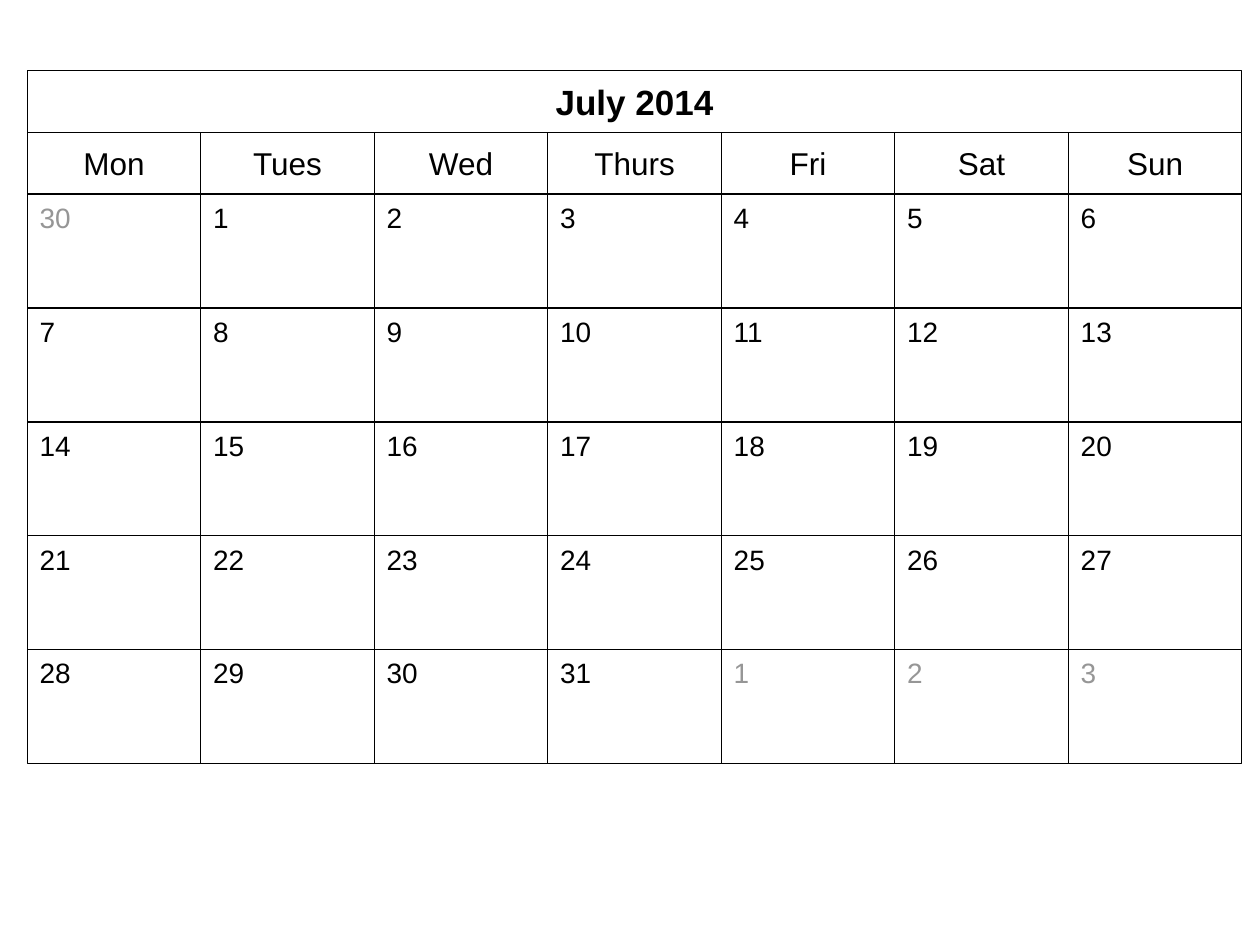
from pptx import Presentation
from pptx.dml.color import RGBColor
from pptx.enum.shapes import MSO_SHAPE as Shape
from pptx.enum.text import MSO_ANCHOR as Anchor, MSO_AUTO_SIZE as AutoSize, PP_ALIGN as Align
from pptx.util import Pt

BLACK = RGBColor(0x00, 0x00, 0x00)
WHITE = RGBColor(0xFF, 0xFF, 0xFF)
GRAY = RGBColor(0x96, 0x96, 0x96)

LEFT, TOP = 15.6, 40.3
DAY_WIDTH, DAY_HEIGHT = 99.15, 65.1
HEADER_HEIGHT = 35.3
WEEKDAYS = ["Mon", "Tues", "Wed", "Thurs", "Fri", "Sat", "Sun"]
DAYS = (
    [(30, GRAY)]
    + [(day, BLACK) for day in range(1, 32)]
    + [(day, GRAY) for day in range(1, 4)]
)


def format_box(shape, text, size, color=BLACK, bold=False):
    shape.line.color.rgb = BLACK
    shape.line.width = Pt(0.75)
    frame = shape.text_frame
    frame.word_wrap = True
    frame.auto_size = AutoSize.NONE
    frame.vertical_anchor = Anchor.TOP
    frame.text = text
    paragraph = frame.paragraphs[0]
    paragraph.alignment = Align.LEFT
    font = paragraph.font
    font.name = "Arial"
    font.size = Pt(size)
    font.bold = bold
    font.color.rgb = color


def format_header(shape, text, size, bold=False):
    format_box(shape, text, size, bold=bold)
    shape.fill.solid()
    shape.fill.fore_color.rgb = WHITE
    frame = shape.text_frame
    frame.vertical_anchor = Anchor.MIDDLE
    frame.margin_top = frame.margin_bottom = Pt(1.5)
    frame.paragraphs[0].alignment = Align.CENTER


def add_cell(slide, column, top, height):
    shape = slide.shapes.add_shape(
        Shape.RECTANGLE, Pt(LEFT + column * DAY_WIDTH), Pt(top), Pt(DAY_WIDTH), Pt(height)
    )
    shape.shadow.inherit = False
    return shape


def place_title(slide, text):
    title = slide.shapes.title
    title.left, title.top = Pt(LEFT), Pt(TOP)
    title.width, title.height = Pt(len(WEEKDAYS) * DAY_WIDTH), Pt(HEADER_HEIGHT)
    format_header(title, text, 20, bold=True)


def add_weekdays(slide):
    for column, name in enumerate(WEEKDAYS):
        cell = add_cell(slide, column, TOP + HEADER_HEIGHT, HEADER_HEIGHT)
        format_header(cell, name, 18)


def add_days(slide):
    first_week_top = TOP + 2 * HEADER_HEIGHT
    for index, (day, color) in enumerate(DAYS):
        week, column = divmod(index, len(WEEKDAYS))
        cell = add_cell(slide, column, first_week_top + week * DAY_HEIGHT, DAY_HEIGHT)
        cell.fill.background()
        format_box(cell, str(day), 16, color)


def main():
    presentation = Presentation()
    presentation.slide_width, presentation.slide_height = Pt(720), Pt(540)
    slide = presentation.slides.add_slide(presentation.slide_layouts[5])
    place_title(slide, "July 2014")
    add_weekdays(slide)
    add_days(slide)
    presentation.save("out.pptx")


if __name__ == "__main__":
    main()
